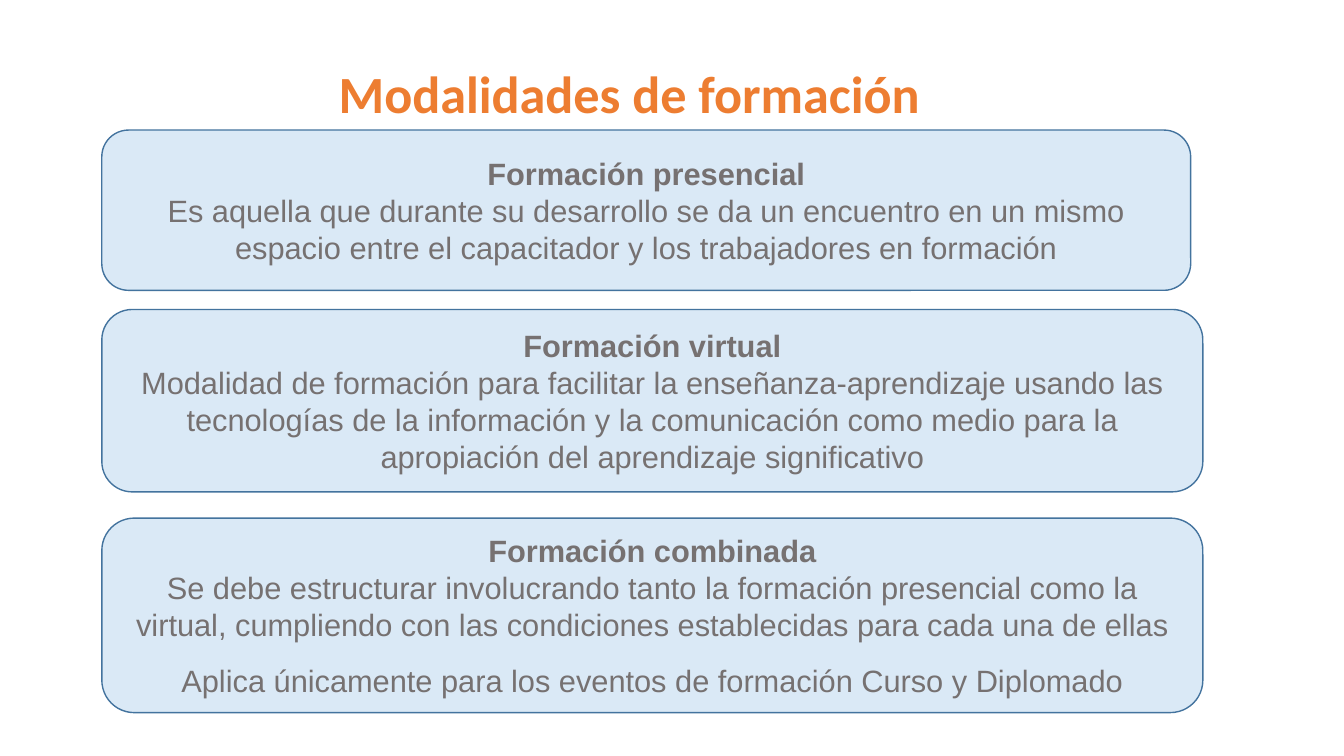
from dataclasses import dataclass

from pptx import Presentation
from pptx.dml.color import RGBColor
from pptx.enum.shapes import MSO_SHAPE
from pptx.enum.text import MSO_ANCHOR, MSO_AUTO_SIZE, PP_ALIGN
from pptx.slide import Slide
from pptx.util import Emu, Pt

ROUNDED = MSO_SHAPE.ROUNDED_RECTANGLE
MIDDLE = MSO_ANCHOR.MIDDLE
GROW = MSO_AUTO_SIZE.SHAPE_TO_FIT_TEXT
CENTER = PP_ALIGN.CENTER
EMU_PER_PX = 9144  # 100 px to the inch


@dataclass(frozen=True)
class Theme:
    title_color: RGBColor = RGBColor(0xED, 0x7D, 0x31)
    text_color: RGBColor = RGBColor(0x76, 0x71, 0x71)
    card_fill: RGBColor = RGBColor(0xDA, 0xE9, 0xF6)
    card_line: RGBColor = RGBColor(0x43, 0x73, 0x9E)
    title_font: str = "Calibri"
    text_font: str = "Arial"
    title_size: float = 37.3
    text_size: float = 22
    line_pitch: float = 26.4
    note_gap: float = 14


@dataclass(frozen=True)
class Card:
    top: int
    width: int
    height: int
    heading: str
    body: str
    note: str = ""


THEME = Theme()
CARD_LEFT = 101
CARDS = (
    Card(129, 1080, 159, "Formación presencial",
         "Es aquella que durante su desarrollo se da un encuentro en un mismo "
         "espacio entre el capacitador y los trabajadores en formación"),
    Card(307, 1092, 181, "Formación virtual",
         "Modalidad de formación para facilitar la enseñanza-aprendizaje usando "
         "las tecnologías de la información y la comunicación como medio para la "
         "apropiación del aprendizaje significativo"),
    Card(514, 1092, 193, "Formación combinada",
         "Se debe estructurar involucrando tanto la formación presencial como la "
         "virtual, cumpliendo con las condiciones establecidas para cada una de "
         "ellas",
         "Aplica únicamente para los eventos de formación Curso y Diplomado"),
)


def px(length: int) -> Emu:
    return Emu(length * EMU_PER_PX)


def add_span(para, text: str, font: str, size: float, color: RGBColor,
             bold: bool) -> None:
    span = para.add_run()
    span.text = text
    span.font.name = font
    span.font.size = Pt(size)
    span.font.bold = bold
    span.font.color.rgb = color


def add_title(page: Slide, text: str) -> None:
    box = page.shapes.add_textbox(px(326), px(56), px(615), px(73))
    frame = box.text_frame
    frame.word_wrap = False
    frame.auto_size = GROW
    add_span(frame.paragraphs[0], text, THEME.title_font, THEME.title_size,
             THEME.title_color, True)


def add_card(page: Slide, card: Card) -> None:
    box = page.shapes.add_shape(ROUNDED, px(CARD_LEFT), px(card.top),
                                px(card.width), px(card.height))
    box.shadow.inherit = False
    box.fill.solid()
    box.fill.fore_color.rgb = THEME.card_fill
    box.line.color.rgb = THEME.card_line
    box.line.width = Pt(1)
    frame = box.text_frame
    frame.word_wrap = True
    frame.vertical_anchor = MIDDLE
    texts = [text for text in (card.heading, card.body, card.note) if text]
    for index, text in enumerate(texts):
        para = frame.add_paragraph() if index else frame.paragraphs[0]
        para.alignment = CENTER
        para.line_spacing = Pt(THEME.line_pitch)
        if text == card.note:
            para.space_before = Pt(THEME.note_gap)
        add_span(para, text, THEME.text_font, THEME.text_size,
                 THEME.text_color, text == card.heading)


def main() -> None:
    deck = Presentation()
    deck.slide_width, deck.slide_height = px(1333), px(750)
    page = deck.slides.add_slide(deck.slide_layouts[6])
    add_title(page, "Modalidades de formación")
    for card in CARDS:
        add_card(page, card)
    deck.save("out.pptx")


if __name__ == "__main__":
    main()
